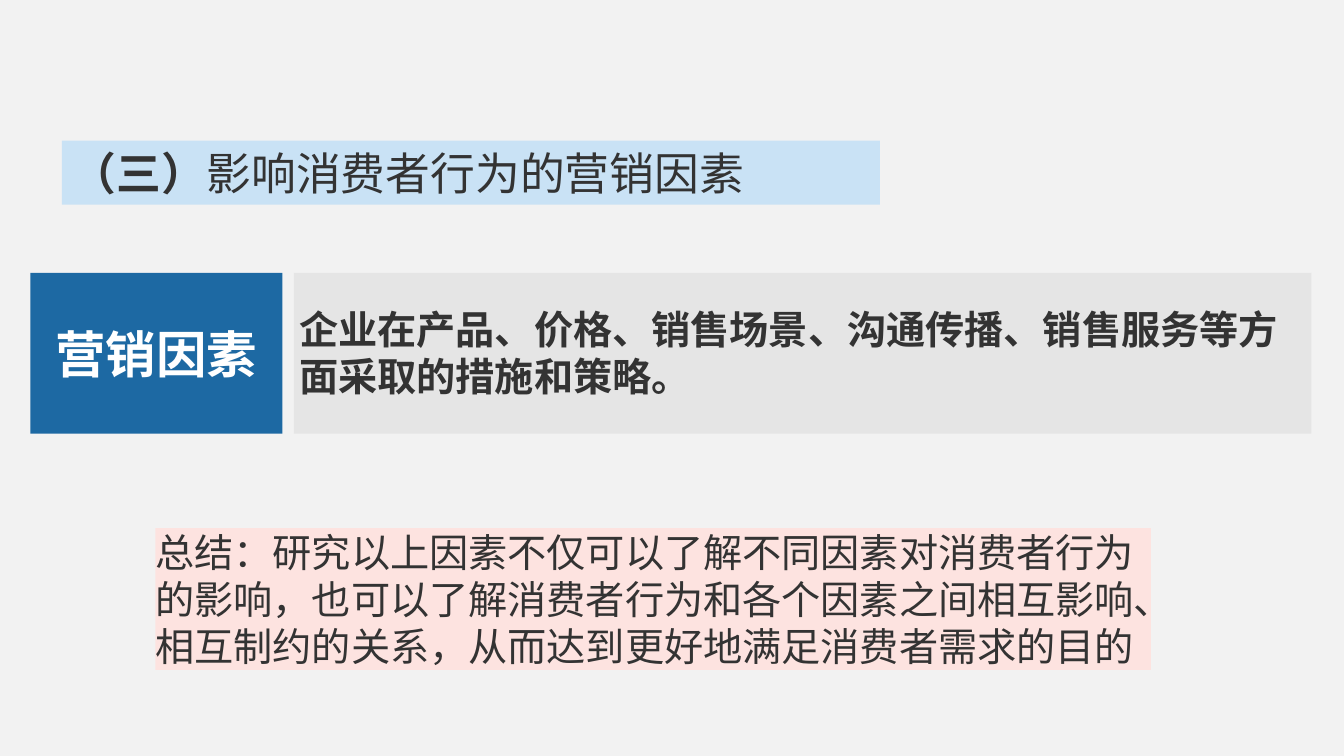
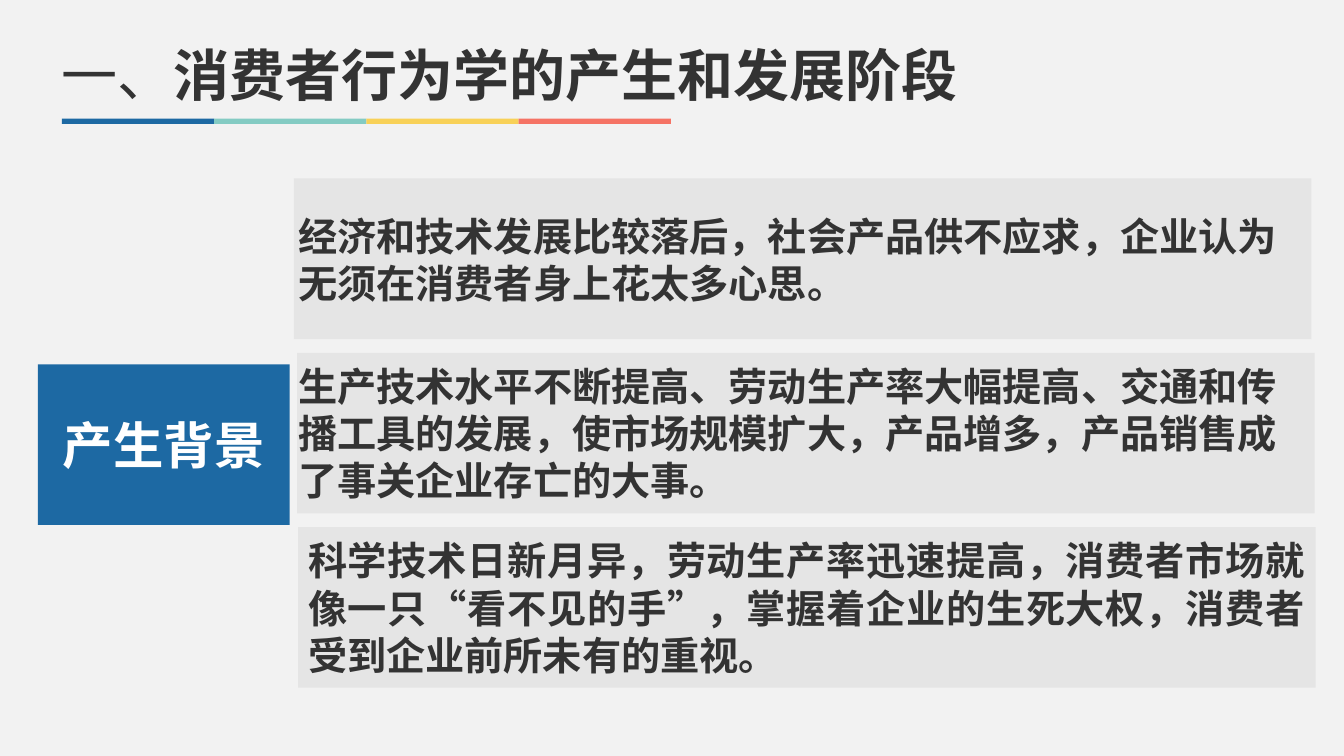
"""Build two slides on marketing factors and the origins of consumer behaviour studies."""
from lxml import etree
from pptx import Presentation
from pptx.dml.color import RGBColor
from pptx.enum.lang import MSO_LANGUAGE_ID as LANG
from pptx.enum.shapes import MSO_SHAPE as SHAPE
from pptx.enum.text import MSO_ANCHOR as ANCHOR, PP_ALIGN as ALIGN
from pptx.oxml.ns import qn
from pptx.util import Emu, Pt

PX = 9525
LATIN = "Calibri"
CJK = "Noto Sans CJK SC"

PAPER = RGBColor(0xF2, 0xF2, 0xF2)
INK = RGBColor(0x33, 0x33, 0x33)
WHITE = RGBColor(0xFF, 0xFF, 0xFF)
BLUE = RGBColor(0x1D, 0x69, 0xA3)
TEAL = RGBColor(0x84, 0xCB, 0xC3)
YELLOW = RGBColor(0xF8, 0xD1, 0x58)
CORAL = RGBColor(0xF5, 0x73, 0x65)
GREY = RGBColor(0xD9, 0xD9, 0xD9)
PALE_BLUE = RGBColor(0xC9, 0xE2, 0xF5)
PALE_RED = RGBColor(0xFD, 0xE3, 0xE0)

LEFT = 59
BAR_W, BAR_H = 145, 5
LABEL_SIZE = (240, 153)
PANEL_SIZE = (969, 153)


def add_rect(s, x, y, w, h, fill, alpha=None):
    sp = s.shapes.add_shape(SHAPE.RECTANGLE, *(Emu(v * PX) for v in (x, y, w, h)))
    sp.shadow.inherit = False
    sp.fill.solid()
    sp.fill.fore_color.rgb = fill
    sp.line.fill.background()
    if alpha:
        color = sp.fill._xPr.find(qn("a:solidFill"))[0]
        etree.SubElement(color, qn("a:alpha")).set("val", str(alpha * 1000))
    return sp


def write(sp, *runs, size=28, color=INK, bold=True, font=LATIN,
          align=ALIGN.LEFT, anchor=ANCHOR.TOP, inset=True):
    tf = sp.text_frame
    tf.word_wrap = True
    tf.vertical_anchor = anchor
    if not inset:
        tf.margin_left = tf.margin_top = tf.margin_right = tf.margin_bottom = 0
    p = tf.paragraphs[0]
    p.alignment = align
    p._p.get_or_add_pPr().set("hangingPunct", "1")
    for run in runs:
        text, style = (run, {}) if isinstance(run, str) else run
        r = p.add_run()
        r.text = text
        r.font.size = Pt(size)
        r.font.bold = style.get("bold", bold)
        r.font.color.rgb = color
        r.font.language_id = LANG.SIMPLIFIED_CHINESE
        r.font.name = style.get("font", font)
        etree.SubElement(r.font._element, qn("a:ea")).set("typeface", CJK)


prs = Presentation()
prs.slide_width = Emu(1280 * PX)
prs.slide_height = Emu(720 * PX)
bg = prs.slide_master.background.fill
bg.solid()
bg.fore_color.rgb = PAPER
blank = prs.slide_layouts[6]
factors, origins = (prs.slides.add_slide(blank) for _ in range(2))

heading = add_rect(factors, LEFT, 134, 779, 61, PALE_BLUE)
write(heading, "（三）", ("影响消费者行为的营销因素", {"bold": False}), size=32)

summary = add_rect(factors, 148, 503, 948, 135, PALE_RED)
write(summary, "总结：研究以上因素不仅可以了解不同因素对消费者行为的影响，"
      "也可以了解消费者行为和各个因素之间相互影响、相互制约的关系，"
      "从而达到更好地满足消费者需求的目的", bold=False, inset=False)

title = origins.shapes.add_textbox(*(Emu(v * PX) for v in (LEFT, 39, 941, 130)))
write(title, ("一、", {"bold": False, "font": CJK}), "消费者行为学的产生和发展阶段",
      size=40, inset=False)

for i, color in enumerate((BLUE, TEAL, YELLOW, CORAL)):
    add_rect(origins, LEFT + i * BAR_W, 113, BAR_W, BAR_H, color)

for s, x, y, text in (
    (factors, 29, 260, "营销因素"),
    (origins, 36, 347, "产生背景"),
):
    label = add_rect(s, x, y, *LABEL_SIZE, BLUE)
    write(label, text, size=36, color=WHITE, align=ALIGN.CENTER, anchor=ANCHOR.MIDDLE)

for s, x, y, text_box, text in (
    (factors, 280, 260, (285, 291, 967, 90),
     "企业在产品、价格、销售场景、沟通传播、销售服务等方面采取的措施和策略。"),
    (origins, 280, 170, (284, 202, 967, 90),
     "经济和技术发展比较落后，社会产品供不应求，企业认为无须在消费者身上花太多心思。"),
    (origins, 283, 336, (284, 345, 948, 135),
     "生产技术水平不断提高、劳动生产率大幅提高、交通和传播工具的发展，"
     "使市场规模扩大，产品增多，产品销售成了事关企业存亡的大事。"),
    (origins, 284, 502, None,
     "科学技术日新月异，劳动生产率迅速提高，消费者市场就像一只“看不见的手”，"
     "掌握着企业的生死大权，消费者受到企业前所未有的重视。"),
):
    panel = add_rect(s, x, y, *PANEL_SIZE, GREY, alpha=50)
    if text_box:
        write(s.shapes.add_textbox(*(Emu(v * PX) for v in text_box)), text, inset=False)
    else:
        write(panel, text, align=ALIGN.JUSTIFY, anchor=ANCHOR.MIDDLE)

prs.save("out.pptx")
